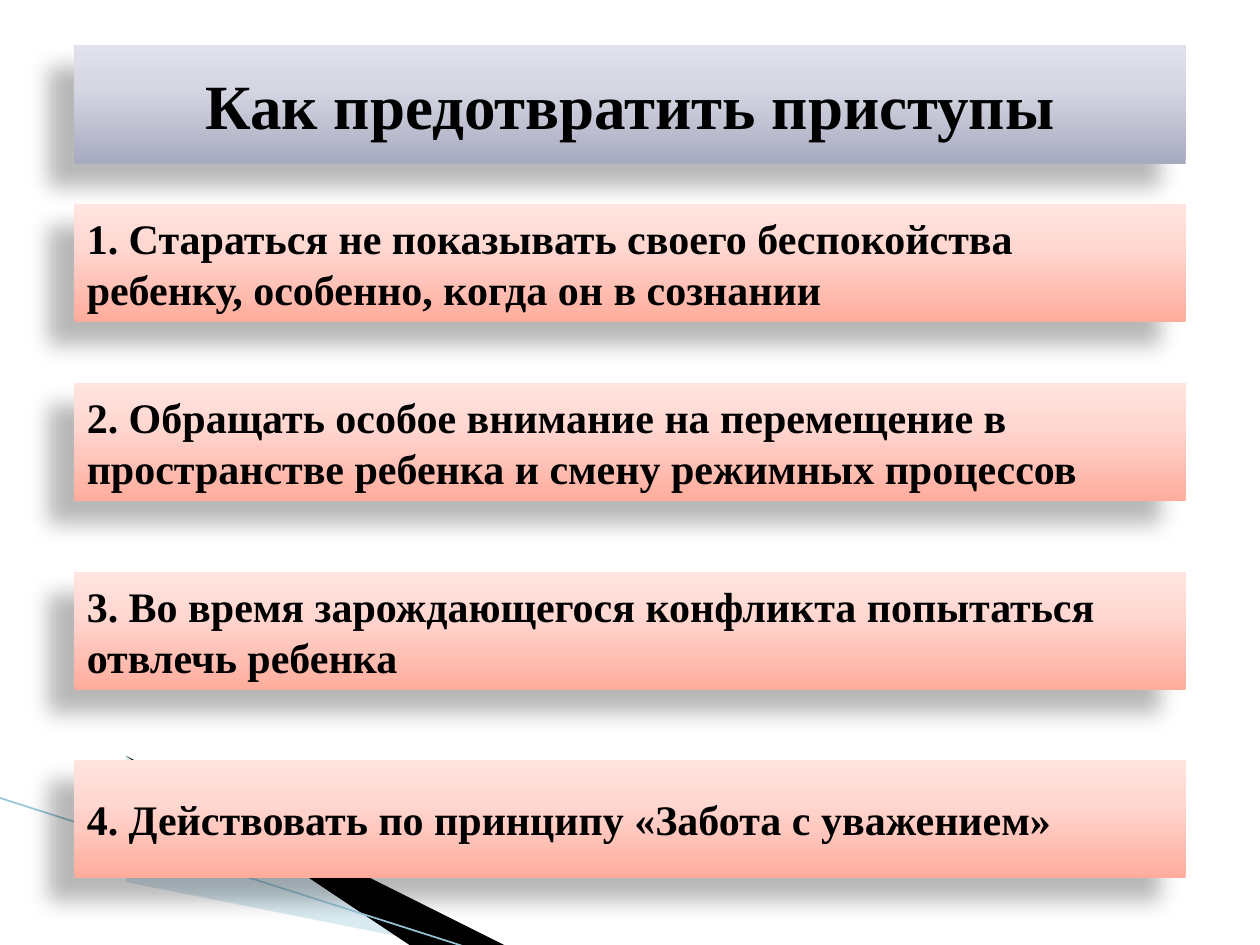
import copy

import lxml.etree
import pptx
import pptx.dml.color
import pptx.enum.shapes
import pptx.enum.text
import pptx.oxml.ns
import pptx.util

Inches = pptx.util.Inches
Pt = pptx.util.Pt
RGBColor = pptx.dml.color.RGBColor
qn = pptx.oxml.ns.qn

BLACK = RGBColor(0x00, 0x00, 0x00)
PALE_BLUE = RGBColor(0xA0, 0xCB, 0xDC)
LINE_BLUE = RGBColor(0x97, 0xC5, 0xD8)
LILAC = (RGBColor(0xA8, 0xAA, 0xC0), RGBColor(0xD6, 0xD7, 0xE3), RGBColor(0xE2, 0xE2, 0xEC))
CORAL = (RGBColor(0xFF, 0xAC, 0x9C), RGBColor(0xFF, 0xD8, 0xD2), RGBColor(0xFF, 0xE4, 0xDF))
STOPS = (0, 0.65, 1)
FONT = "Times New Roman"

LEFT, WIDTH, HEIGHT = Inches(0.59), Inches(8.82), Inches(0.94)
TITLE_TOP = Inches(0.36)
TITLE = "Как предотвратить приступы"
ADVICE = (
    (1.62, "1. Стараться не показывать своего беспокойства ребенку, особенно, когда он в сознании"),
    (3.04, "2. Обращать особое внимание на перемещение в пространстве ребенка и смену режимных процессов"),
    (4.54, "3. Во время зарождающегося конфликта попытаться отвлечь ребенка"),
    (6.03, "4. Действовать по принципу «Забота с уважением»"),
)


def set_alpha(color_parent, percent):
    """Make the colour inside an XML fill partly transparent."""
    color = color_parent.find(".//" + qn("a:srgbClr"))
    lxml.etree.SubElement(color, qn("a:alpha"), val=str(percent * 1000))


def add_shadow(panel):
    """Give a panel a soft shadow to its lower left."""
    panel.shadow.inherit = False
    effects = panel._element.spPr.find(qn("a:effectLst"))
    shadow = lxml.etree.SubElement(
        effects, qn("a:outerShdw"), blurRad=str(Pt(11.8)), dist=str(Pt(19.7)),
        dir=str(141 * 60000), algn="ctr", rotWithShape="0")
    lxml.etree.SubElement(shadow, qn("a:srgbClr"), val=str(BLACK))
    set_alpha(shadow, 28)


def fill_gradient(panel, colors):
    """Fill a panel with a gradient that runs from bottom to top."""
    panel.fill.gradient()
    panel.fill.gradient_angle = 90
    stop_list = panel._element.spPr.find(".//" + qn("a:gsLst"))
    stop_list.append(copy.deepcopy(stop_list[-1]))
    for stop, position, color in zip(panel.fill.gradient_stops, STOPS, colors):
        stop.position = position
        stop.color.rgb = color


def style_panel(panel, box, colors, text, size, alignment):
    """Place a panel in its box and give it fill, shadow and text."""
    panel.left, panel.top, panel.width, panel.height = box
    fill_gradient(panel, colors)
    panel.line.fill.background()
    add_shadow(panel)
    frame = panel.text_frame
    frame.word_wrap = True
    frame.auto_size = pptx.enum.text.MSO_AUTO_SIZE.NONE
    frame.vertical_anchor = pptx.enum.text.MSO_ANCHOR.MIDDLE
    paragraph = frame.paragraphs[0]
    paragraph.alignment = alignment
    run = paragraph.add_run()
    run.text = text
    run.font.name = FONT
    run.font.size = Pt(size)
    run.font.bold = True
    run.font.color.rgb = BLACK


def add_wedge(slide, points, color):
    """Add a flat wedge through the given points in inches."""
    builder = slide.shapes.build_freeform(*points[0], scale=Inches(1))
    builder.add_line_segments(points[1:], close=True)
    wedge = builder.convert_to_shape()
    wedge.fill.solid()
    wedge.fill.fore_color.rgb = color
    wedge.line.fill.background()
    wedge.shadow.inherit = False
    return wedge


def add_corner(slide):
    """Draw the swoosh in the lower left corner."""
    pale = add_wedge(slide, ((0.55, 6.51), (5.95, 7.51), (4.56, 7.51), (0.55, 6.5)), PALE_BLUE)
    set_alpha(pale._element.spPr, 40)
    add_wedge(slide, ((0.53, 6.49), (4.57, 7.51), (3.72, 7.52), (0.54, 6.5)), BLACK)
    edge = slide.shapes.add_connector(
        pptx.enum.shapes.MSO_CONNECTOR.STRAIGHT,
        Inches(-0.01), Inches(6.33), Inches(3.71), Inches(7.52))
    edge.line.color.rgb = LINE_BLUE
    edge.line.width = Pt(0.95)
    lxml.etree.SubElement(edge._element.spPr, qn("a:effectLst"))


def add_title(slide, box):
    """Turn the title placeholder into the heading panel."""
    style_panel(slide.shapes.title, box, LILAC, TITLE, 36, pptx.enum.text.PP_ALIGN.CENTER)


def add_advice(slide, box, text):
    """Add one panel of advice in the given box."""
    panel = slide.shapes.add_shape(pptx.enum.shapes.MSO_SHAPE.RECTANGLE, *box)
    style_panel(panel, box, CORAL, text, 24, pptx.enum.text.PP_ALIGN.LEFT)


def main():
    """Build the slide and save it."""
    deck = pptx.Presentation()
    deck.slide_width, deck.slide_height = Inches(10), Inches(7.5)
    slide = deck.slides.add_slide(deck.slide_layouts.get_by_name("Title Only"))
    add_corner(slide)
    add_title(slide, (LEFT, TITLE_TOP, WIDTH, HEIGHT))
    for top, text in ADVICE:
        add_advice(slide, (LEFT, Inches(top), WIDTH, HEIGHT), text)
    deck.save("out.pptx")


if __name__ == "__main__":
    main()
